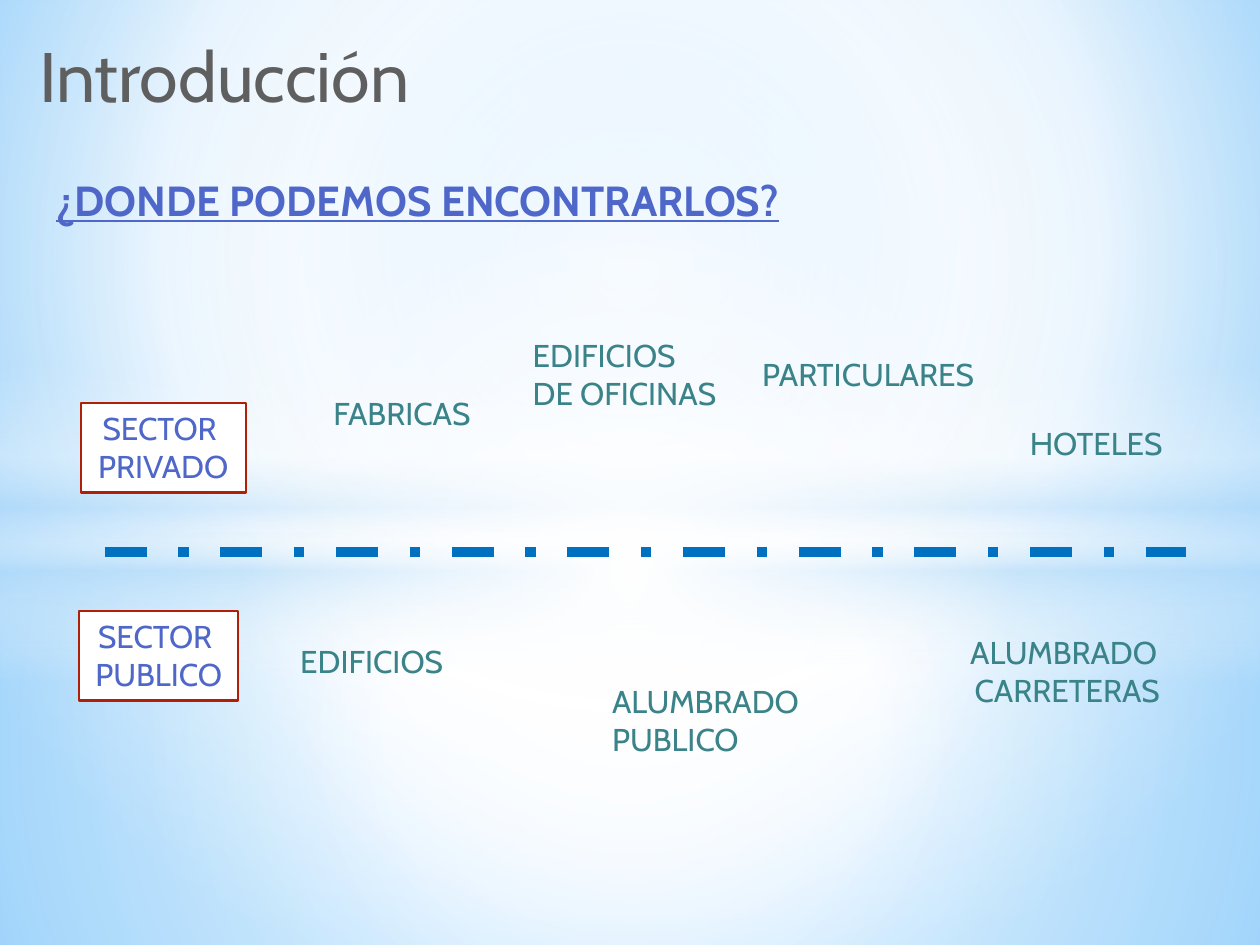
from dataclasses import dataclass
from lxml.etree import SubElement
from pptx import Presentation
from pptx.dml.color import RGBColor
from pptx.enum.dml import MSO_LINE
from pptx.enum.shapes import MSO_CONNECTOR, MSO_SHAPE
from pptx.enum.text import MSO_ANCHOR, MSO_AUTO_SIZE, PP_ALIGN
from pptx.oxml.ns import qn
from pptx.util import Inches, Pt


@dataclass(frozen=True)
class Theme:
    """Colours, font and type sizes of the slide."""
    font: str = "Cabin"
    gray: str = "5F5F5F"
    blue: str = "4E67C8"
    teal: str = "398389"
    red: str = "B01F07"
    white: str = "FFFFFF"
    pale: str = "B4DCFA"
    sky: str = "9ED5FF"
    deep: str = "5BB9FF"
    rule: str = "0070C0"
    title: int = 40
    head: int = 24
    body: int = 18


THEME = Theme()


def color(code):
    """Turn a hex code into a colour."""
    return RGBColor.from_string(code)


def blend(fill, root, stops, focus=None):
    """Fill with a gradient: circular around focus, or else top to bottom."""
    fill.gradient()
    grad = next(root.iter(qn("a:gradFill")))
    for child in list(grad):
        grad.remove(child)
    group = SubElement(grad, qn("a:gsLst"))
    for place, code, alpha in stops:
        stop = SubElement(group, qn("a:gs"), pos=str(place * 1000))
        tint = SubElement(stop, qn("a:srgbClr"), val=code)
        if alpha < 100:
            SubElement(tint, qn("a:alpha"), val=str(alpha * 1000))
    if focus:
        route = SubElement(grad, qn("a:path"), path="circle")
        sides = {side: str(part * 1000) for side, part in zip("ltrb", focus)}
        SubElement(route, qn("a:fillToRect"), **sides)
    else:
        SubElement(grad, qn("a:lin"), ang="5400000", scaled="0")


def write(shape, text, size=THEME.body, tone=THEME.teal, align=PP_ALIGN.CENTER,
          anchor=MSO_ANCHOR.MIDDLE, wrap=True, bold=False, line=False):
    """Put formatted text in a shape, one paragraph per line."""
    frame = shape.text_frame
    frame.word_wrap = wrap
    frame.vertical_anchor = anchor
    frame.text = text
    for para in frame.paragraphs:
        para.alignment = align
        font = para.font
        font.name, font.size = THEME.font, Pt(size)
        font.bold, font.underline = bold, line
        font.color.rgb = color(tone)
    return frame


def label(slide, box, text, **style):
    """Add a text box with formatted text."""
    shape = slide.shapes.add_textbox(*map(Inches, box))
    return write(shape, text, **style)


def panel(slide, box, kind=MSO_SHAPE.RECTANGLE):
    """Add a plain shape without line or shadow."""
    shape = slide.shapes.add_shape(kind, *map(Inches, box))
    shape.shadow.inherit = False
    shape.line.fill.background()
    return shape


def backdrop(slide, box):
    """Paint the glowing sky and its horizon."""
    left, top, width, height = box
    white, pale, mid = THEME.white, THEME.pale, (50, 50, 50, 50)
    blend(slide.background.fill, slide.element,
          [(0, THEME.sky, 100), (60, white, 100), (100, THEME.deep, 100)],
          (20, 10, 20, 60))
    split = 4.23
    rect, oval = MSO_SHAPE.RECTANGLE, MSO_SHAPE.OVAL
    layers = [
        (split, height - split, rect, mid,
         [(0, white, 91), (37, white, 76), (100, pale, 79)]),
        (0, split, rect, mid,
         [(0, white, 89), (48, white, 62), (100, pale, 79)]),
        (2.9, 2.5, rect, None,
         [(0, white, 0), (29, white, 30), (45, pale, 40),
          (55, white, 26), (65, pale, 60), (100, white, 0)]),
        (1.75, 5.58, oval, mid, [(0, white, 100), (54, white, 0)]),
    ]
    for drop, tall, kind, focus, stops in layers:
        shape = panel(slide, (left, top + drop, width, tall), kind)
        blend(shape.fill, shape.element, stops, focus)


def header(slide, box):
    """Write the title and the question under it."""
    left, top, width, height = box
    frame = label(slide, (left, top, width, 0.86), "Introducción",
                  size=THEME.title, tone=THEME.gray, align=PP_ALIGN.LEFT,
                  anchor=MSO_ANCHOR.TOP)
    frame.margin_left = frame.margin_right = Inches(0.04)
    frame.margin_top = frame.margin_bottom = Inches(0.04)
    label(slide, (left + 0.08, top + height - 0.71, 6.2, 0.71),
          "¿DONDE PODEMOS ENCONTRARLOS?", size=THEME.head, tone=THEME.blue,
          align=PP_ALIGN.LEFT, bold=True, line=True)


def divide(slide, box):
    """Draw the dashed rule between the sectors."""
    left, top, width, height = box
    ends = (left, top, left + width, top + height)
    rule = slide.shapes.add_connector(MSO_CONNECTOR.STRAIGHT, *map(Inches, ends))
    rule.line.color.rgb = color(THEME.rule)
    rule.line.width = Pt(6)
    rule.line.dash_style = MSO_LINE.DASH_DOT
    SubElement(rule.element.spPr, qn("a:effectLst"))


def sector(slide, box, name, wide, places):
    """Add a framed sector name and the places that belong to it."""
    left, top, width, height = box
    tag = panel(slide, (left, top, wide, 0.71))
    tag.fill.solid()
    tag.fill.fore_color.rgb = color(THEME.white)
    tag.line.color.rgb = color(THEME.red)
    tag.line.width = Pt(1.25)
    frame = write(tag, name, tone=THEME.blue, anchor=MSO_ANCHOR.TOP, wrap=False)
    frame.auto_size = MSO_AUTO_SIZE.SHAPE_TO_FIT_TEXT
    for text, right, down, align in places:
        label(slide, (left + right, top + down, 2, 0.79), text, align=align)


def main():
    """Build the slide and save it."""
    deck = Presentation()
    deck.slide_width, deck.slide_height = Inches(10), Inches(7.5)
    slide = deck.slides.add_slide(deck.slide_layouts[6])
    mid, start = PP_ALIGN.CENTER, PP_ALIGN.LEFT
    backdrop(slide, (0, 0, 10, 7.5))
    header(slide, (0.27, 0.22, 9.35, 1.72))
    divide(slide, (0.83, 4.38, 8.58, 0))
    sector(slide, (0.64, 3.2, 9.06, 0.71), "SECTOR \nPRIVADO", 1.31, [
        ("FABRICAS", 1.55, -0.32, mid),
        ("PARTICULARES", 5.25, -0.63, mid),
        ("EDIFICIOS\nDE OFICINAS", 3.49, -0.63, start),
        ("HOTELES", 7.06, -0.08, mid),
    ])
    sector(slide, (0.63, 4.85, 8.84, 1.26), "SECTOR \nPUBLICO", 1.26, [
        ("EDIFICIOS", 1.32, 0, mid),
        ("ALUMBRADO\nPUBLICO", 4.13, 0.47, start),
        ("ALUMBRADO \nCARRETERAS", 6.84, 0.08, mid),
    ])
    deck.save("out.pptx")


if __name__ == "__main__":
    main()
